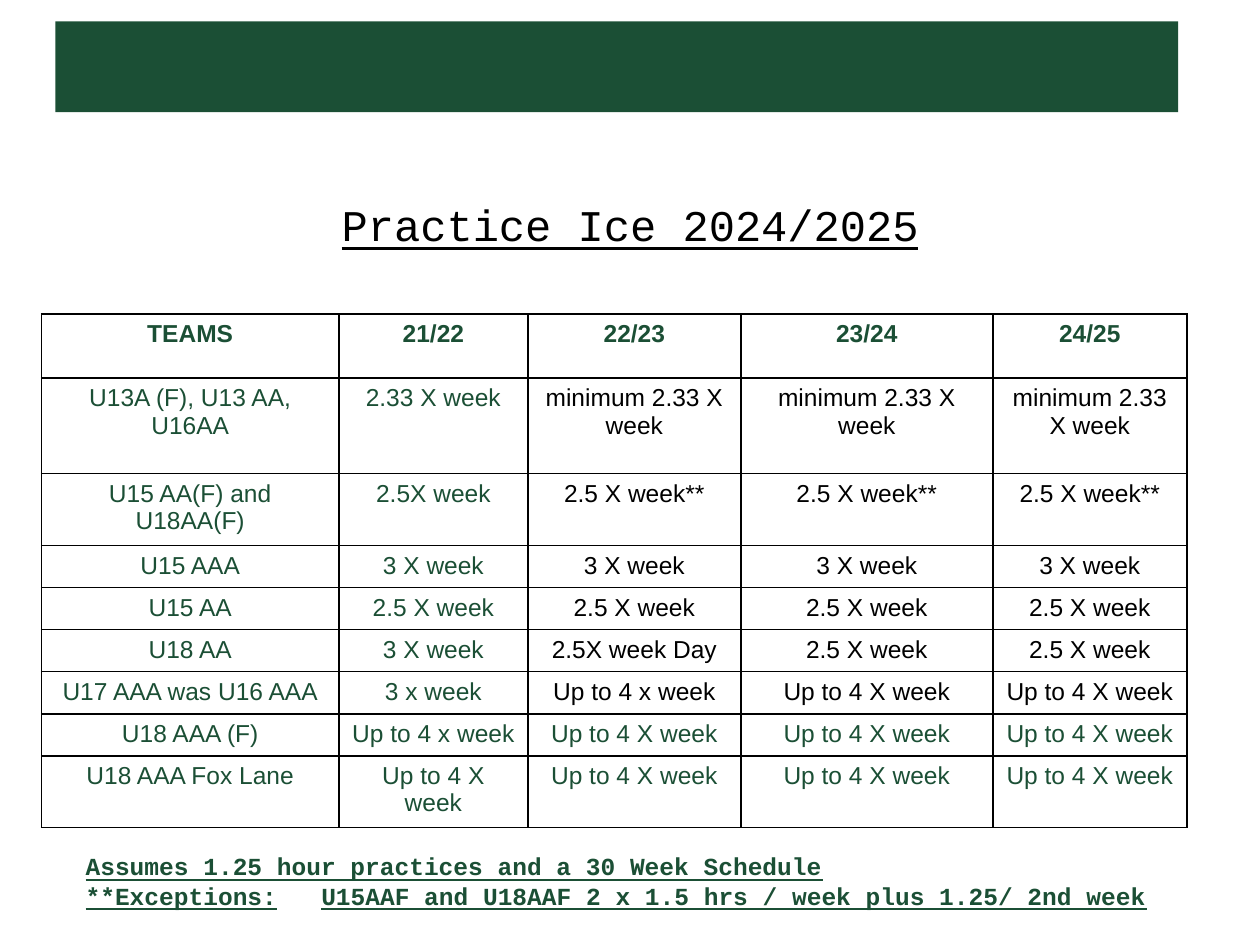
import pptx
import pptx.dml.color
import pptx.enum.shapes
import pptx.enum.text
import pptx.oxml
import pptx.oxml.ns
import pptx.util
from pptx.util import Inches

GREEN = pptx.dml.color.RGBColor(0x1B, 0x4F, 0x35)
BLACK = pptx.dml.color.RGBColor(0, 0, 0)
CENTER = pptx.enum.text.PP_ALIGN.CENTER
NS = pptx.oxml.ns.nsdecls("a")


def style(paragraph, name, size, color, bold=False, underline=False):
    font = paragraph.font
    font.name = name
    font.size = pptx.util.Pt(size)
    font.color.rgb = color
    font.bold = bold
    font.underline = underline


def add_text_frame(slide, left, top, width, height):
    frame = slide.shapes.add_textbox(
        Inches(left), Inches(top), Inches(width), Inches(height)).text_frame
    frame.word_wrap = True
    frame.vertical_anchor = pptx.enum.text.MSO_ANCHOR.MIDDLE
    frame.margin_left = frame.margin_right = Inches(0.05)
    frame.margin_top = frame.margin_bottom = Inches(0.05)
    return frame


presentation = pptx.Presentation()
presentation.slide_width = Inches(10)
presentation.slide_height = Inches(7.5)
slide = presentation.slides.add_slide(presentation.slide_layouts[6])

banner = slide.shapes.add_shape(
    pptx.enum.shapes.MSO_SHAPE.RECTANGLE,
    Inches(0.44), Inches(0.17), Inches(8.91), Inches(0.72))
banner.shadow.inherit = False
banner.fill.solid()
banner.fill.fore_color.rgb = GREEN
banner.line.fill.background()

title = add_text_frame(slide, 0.63, 1.52, 8.74, 0.52).paragraphs[0]
title.text = "Practice Ice 2024/2025"
title.alignment = CENTER
style(title, "Courier New", 25, BLACK, underline=True)

schedule = [
    ["TEAMS", "21/22", "22/23", "23/24", "24/25"],
    ["U13A (F), U13 AA, U16AA", "2.33 X week"] + ["minimum 2.33 X week"] * 3,
    ["U15 AA(F) and U18AA(F)", "2.5X week"] + ["2.5 X week**"] * 3,
    ["U15 AAA"] + ["3 X week"] * 4,
    ["U15 AA"] + ["2.5 X week"] * 4,
    ["U18 AA", "3 X week", "2.5X week Day", "2.5 X week", "2.5 X week"],
    ["U17 AAA was U16 AAA", "3 x week", "Up to 4 x week", "Up to 4 X week", "Up to 4 X week"],
    ["U18 AAA (F)", "Up to 4 x week"] + ["Up to 4 X week"] * 3,
    ["U18 AAA Fox Lane"] + ["Up to 4 X week"] * 4,
]
column_widths = [2.36, 1.5, 1.69, 2, 1.54]
row_heights = [0.51, 0.76, 0.57] + [0.33] * 5 + [0.57]

practices = slide.shapes.add_table(
    len(schedule), len(column_widths), Inches(0.33), Inches(2.49),
    Inches(sum(column_widths)), Inches(sum(row_heights))).table
practices.horz_banding = False
for column, width in zip(practices.columns, column_widths):
    column.width = Inches(width)
for row, height in zip(practices.rows, row_heights):
    row.height = Inches(height)

for r, entries in enumerate(schedule):
    for c, entry in enumerate(entries):
        cell = practices.cell(r, c)
        cell_properties = cell._tc.get_or_add_tcPr()
        for side in ("lnL", "lnR", "lnT", "lnB"):
            cell_properties.append(pptx.oxml.parse_xml(
                f'<a:{side} {NS} w="12700"><a:solidFill>'
                f'<a:srgbClr val="{BLACK}"/></a:solidFill></a:{side}>'))
        cell.fill.background()
        cell.text = entry
        paragraph = cell.text_frame.paragraphs[0]
        paragraph.alignment = CENTER
        color = BLACK if c >= 2 and 1 <= r <= 6 else GREEN
        style(paragraph, "Arial", 14, color, bold=r == 0)

footnotes = add_text_frame(slide, 0.63, 6.7, 8.74, 0.58)
footnotes.text = (
    "Assumes 1.25 hour practices and a 30 Week Schedule\n"
    "**Exceptions:\tU15AAF and U18AAF 2 x 1.5 hrs / week plus 1.25/ 2nd week")
footnotes.paragraphs[1]._p.get_or_add_pPr().append(pptx.oxml.parse_xml(
    f'<a:tabLst {NS}><a:tab pos="{Inches(1.87)}" algn="l"/></a:tabLst>'))
for footnote in footnotes.paragraphs:
    style(footnote, "Courier New", 14, GREEN, bold=True, underline=True)

presentation.save("out.pptx")
